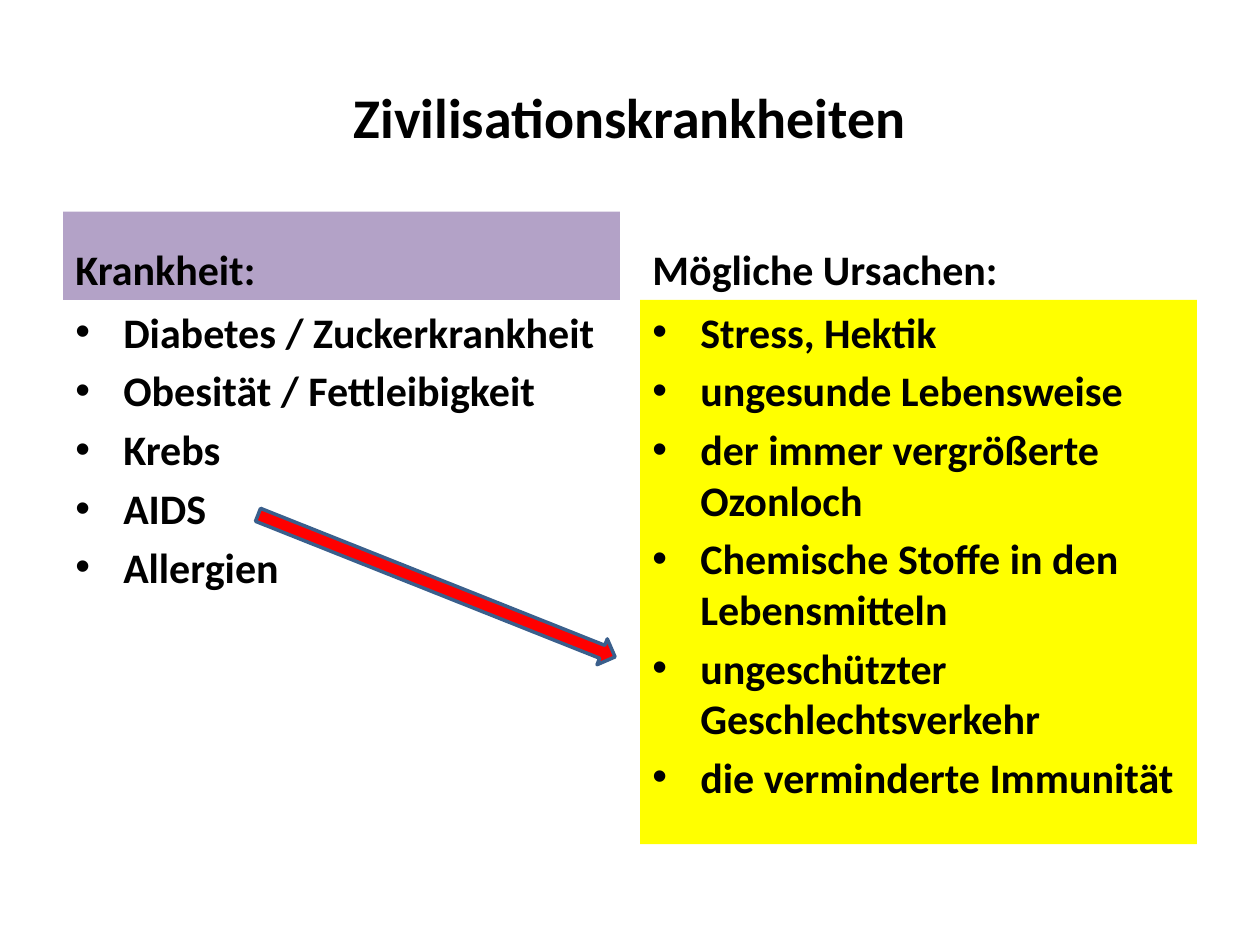
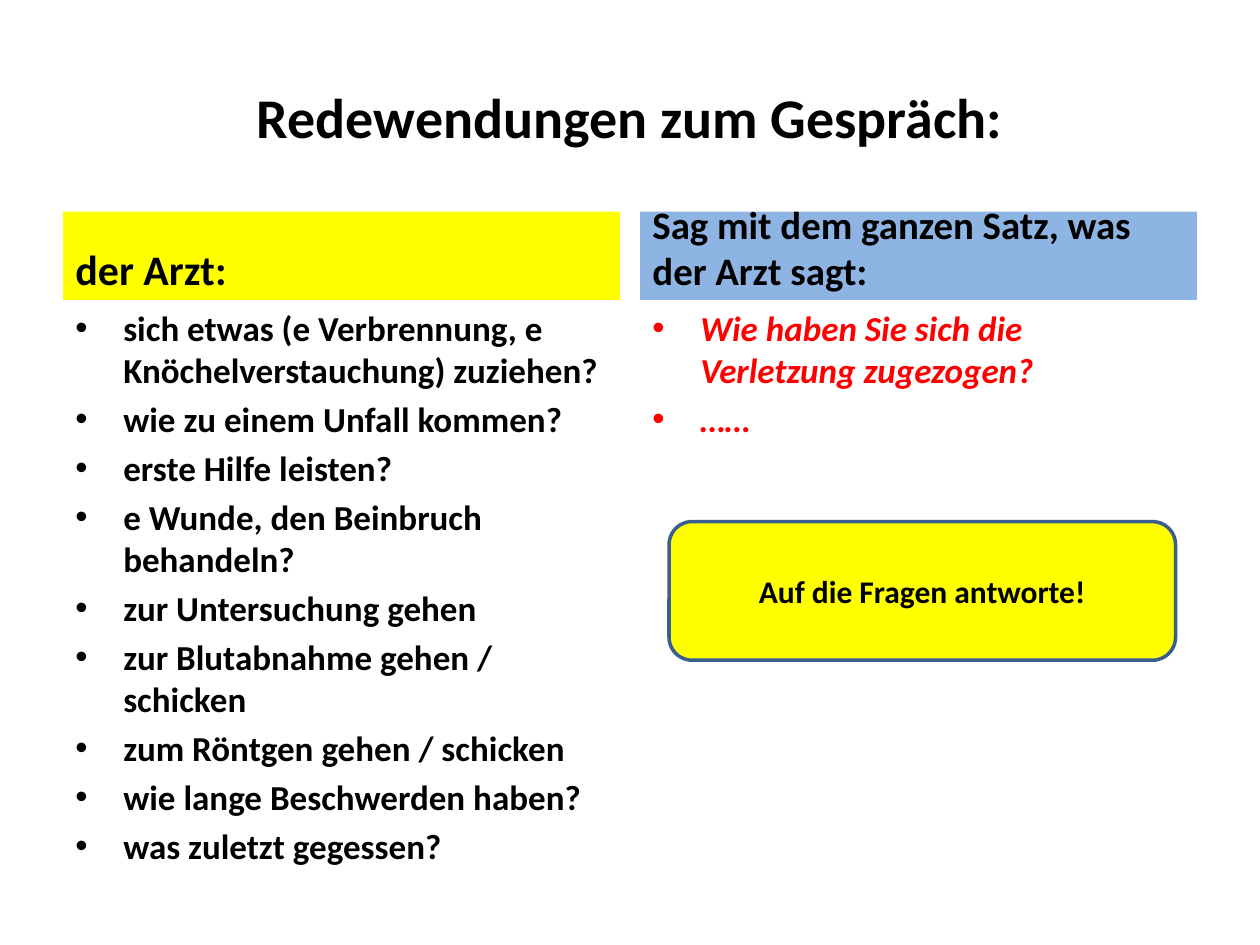
"""Build two German lesson slides that compare two columns under a title."""
from pptx import Presentation
from pptx.dml.color import RGBColor
from pptx.enum import shapes, text
from pptx.oxml import parse_xml
from pptx.oxml.ns import nsdecls
from pptx.util import Inches, Pt

BLACK = RGBColor(0x00, 0x00, 0x00)
RED = RGBColor(0xFF, 0x00, 0x00)
YELLOW = RGBColor(0xFF, 0xFF, 0x00)
PURPLE = RGBColor(0xB3, 0xA2, 0xC7)
BLUE = RGBColor(0x8E, 0xB4, 0xE3)
OUTLINE = RGBColor(0x3A, 0x5F, 0x8C)
FONT = "Calibri"

SLIDES = [
    {
        "title": "Zivilisationskrankheiten",
        "columns": [
            {
                "heading": "Krankheit:",
                "heading_format": {"fill": PURPLE},
                "items": ["Diabetes / Zuckerkrankheit", "Obesität / Fettleibigkeit",
                          "Krebs", "AIDS", "Allergien"],
                "item_format": {},
            },
            {
                "heading": "Mögliche Ursachen:",
                "heading_format": {},
                "items": ["Stress, Hektik", "ungesunde Lebensweise",
                          "der immer vergrößerte Ozonloch",
                          "Chemische Stoffe in den Lebensmitteln",
                          "ungeschützter Geschlechtsverkehr",
                          "die verminderte Immunität"],
                "item_format": {"fill": YELLOW},
            },
        ],
    },
    {
        "title": "Redewendungen zum Gespräch:",
        "columns": [
            {
                "heading": "der Arzt:",
                "heading_format": {"fill": YELLOW},
                "items": ["sich etwas (e Verbrennung, e Knöchelverstauchung) zuziehen?",
                          "wie zu einem Unfall kommen?", "erste Hilfe leisten?",
                          "e Wunde, den Beinbruch behandeln?",
                          "zur Untersuchung gehen",
                          "zur Blutabnahme gehen / schicken",
                          "zum Röntgen gehen / schicken",
                          "wie lange Beschwerden haben?", "was zuletzt gegessen?"],
                "item_format": {"size": 20},
            },
            {
                "heading": "Sag mit dem ganzen Satz, was der Arzt sagt:",
                "heading_format": {"fill": BLUE, "size": 22.2},
                "items": ["Wie haben Sie sich die Verletzung zugezogen?", "……"],
                "item_format": {"size": 20, "color": RED, "italic": True},
            },
        ],
    },
]
TASK = "Auf die Fragen antworte!"

MARGIN, CONTENT_WIDTH = 0.5, 9
COLUMN_WIDTH = 4.42
COLUMN_STEP = CONTENT_WIDTH - COLUMN_WIDTH
HEADING_TOP, HEADING_HEIGHT, LIST_HEIGHT = 1.68, 0.7, 4.32
LIST_TOP = HEADING_TOP + HEADING_HEIGHT
INDENT = Inches(0.38)


def write(box, lines, size=24, color=BLACK, italic=False, fill=None, bullets=False,
          align=text.PP_ALIGN.LEFT, anchor=text.MSO_ANCHOR.TOP, gap=0.2):
    """Fill a shape with one formatted paragraph per line."""
    if fill is not None:
        box.fill.solid()
        box.fill.fore_color.rgb = fill
    frame = box.text_frame
    frame.word_wrap = True
    frame.auto_size = text.MSO_AUTO_SIZE.NONE
    frame.vertical_anchor = anchor
    for index, line in enumerate(lines):
        para = frame.add_paragraph() if index else frame.paragraphs[0]
        para.alignment = align
        para.space_before = Pt(size * gap)
        if bullets:
            properties = para._p.get_or_add_pPr()
            properties.set("marL", str(INDENT))
            properties.set("indent", str(-INDENT))
            properties.append(parse_xml(f'<a:buFont {nsdecls("a")} typeface="Arial"/>'))
            properties.append(parse_xml(f'<a:buChar {nsdecls("a")} char="•"/>'))
        span = para.add_run()
        span.text = line
        span.font.name = FONT
        span.font.size = Pt(size)
        span.font.bold = True
        span.font.italic = italic
        span.font.color.rgb = color


def add_column(page, left, column):
    """Place a heading band with its bulleted list below."""
    heading = page.shapes.add_textbox(
        Inches(left), Inches(HEADING_TOP), Inches(COLUMN_WIDTH), Inches(HEADING_HEIGHT))
    write(heading, [column["heading"]], anchor=text.MSO_ANCHOR.BOTTOM,
          **column["heading_format"])
    items = page.shapes.add_textbox(
        Inches(left), Inches(LIST_TOP), Inches(COLUMN_WIDTH), Inches(LIST_HEIGHT))
    write(items, column["items"], bullets=True, **column["item_format"])


def add_outlined(page, kind, left, top, width, height, fill):
    """Add a filled preset shape with the shared outline."""
    shape = page.shapes.add_shape(
        kind, Inches(left), Inches(top), Inches(width), Inches(height))
    shape.shadow.inherit = False
    shape.fill.solid()
    shape.fill.fore_color.rgb = fill
    shape.line.color.rgb = OUTLINE
    shape.line.width = Pt(2)
    return shape


def add_page(deck, content):
    """Add a titled slide with its two columns."""
    page = deck.slides.add_slide(deck.slide_layouts[5])
    title = page.shapes.title
    title.left, title.top = Inches(MARGIN), Inches(0.3)
    title.width, title.height = Inches(CONTENT_WIDTH), Inches(1.25)
    write(title, [content["title"]], size=32, gap=0,
          align=text.PP_ALIGN.CENTER, anchor=text.MSO_ANCHOR.MIDDLE)
    for index, column in enumerate(content["columns"]):
        add_column(page, MARGIN + index * COLUMN_STEP, column)
    return page


def main():
    """Build and save the deck."""
    deck = Presentation()
    deck.slide_width, deck.slide_height = Inches(10), Inches(7.5)
    diseases, phrases = [add_page(deck, content) for content in SLIDES]

    arrow = add_outlined(diseases, shapes.MSO_SHAPE.RIGHT_ARROW,
                         1.94, 4.54, 3.05, 0.22, RED)
    arrow.rotation = 21.7

    task = add_outlined(phrases, shapes.MSO_SHAPE.ROUNDED_RECTANGLE,
                        5.31, 4.14, 4.02, 1.1, YELLOW)
    write(task, [TASK], size=18, gap=0,
          align=text.PP_ALIGN.CENTER, anchor=text.MSO_ANCHOR.MIDDLE)
    deck.save("out.pptx")


if __name__ == "__main__":
    main()
